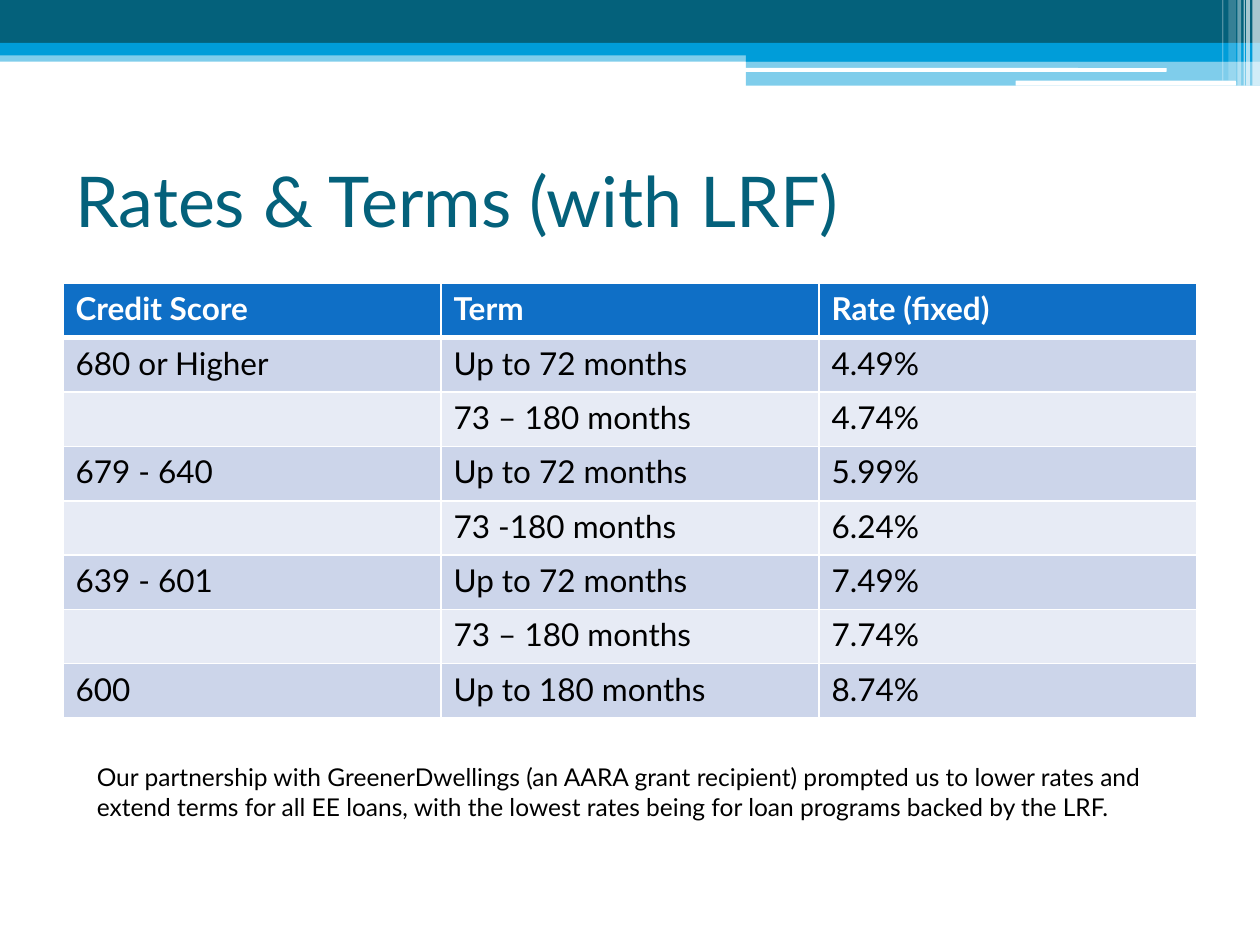
import lxml.etree
import pptx
import pptx.dml.color
import pptx.enum.shapes
import pptx.enum.text
import pptx.oxml
import pptx.oxml.ns
import pptx.util

Inches = pptx.util.Inches
Shape = pptx.enum.shapes.MSO_SHAPE
Anchor = pptx.enum.text.MSO_ANCHOR
qn = pptx.oxml.ns.qn

FONT = "Lato"
TEAL, CYAN, BLUE = "04617B", "009DD9", "0F6FC6"
WHITE, BLACK = "FFFFFF", "000000"
BANDS = ("CCD5EA", "E7EBF5")

BARS = [
    (0, 0.4, 10, 0.09, CYAN, 50),
    (0, 0, 10, 0.34, TEAL, 100),
    (0, 0.34, 10, 0.1, CYAN, 100),
    (5.92, 0.39, 4.08, 0.1, CYAN, 100),
    (5.92, 0.48, 4.08, 0.2, CYAN, 50),
]
GROOVES = [(5.91, 0.54, 3.35, 0.03), (8.06, 0.64, 1.75, 0.04)]
STRIPES = [
    (9.94, 0.06, 0.68, 65),
    (9.89, 0.03, 0.68, 65),
    (9.87, 0.01, 0.68, 60),
    (9.82, 0.03, 0.68, 40),
    (9.75, 0.06, 0.64, 20),
    (9.7, 0.01, 0.64, 30),
]
RATES = [
    ("Credit Score", "Term", "Rate (fixed)"),
    ("680 or Higher", "Up to 72 months", "4.49%"),
    ("", "73 – 180 months", "4.74%"),
    ("679 - 640", "Up to 72 months", "5.99%"),
    ("", "73 -180 months", "6.24%"),
    ("639 - 601", "Up to 72 months", "7.49%"),
    ("", "73 – 180 months", "7.74%"),
    ("600", "Up to 180 months", "8.74%"),
]
NOTE = (
    "Our partnership with GreenerDwellings (an AARA grant recipient) prompted us "
    "to lower rates and extend terms for all EE loans, with the lowest rates "
    "being for loan programs backed by the LRF."
)


def paint(fill, color, opacity=100):
    """Give a fill a solid colour and an opacity in percent."""
    fill.solid()
    fill.fore_color.rgb = pptx.dml.color.RGBColor.from_string(color)
    if opacity < 100:
        tint = fill._xPr.find(qn("a:solidFill"))[0]
        lxml.etree.SubElement(tint, qn("a:alpha")).set("val", str(opacity * 1000))


def style_text(para, size, color, bold=False):
    """Set the font of a paragraph."""
    para.font.name = FONT
    para.font.size = pptx.util.Pt(size)
    para.font.bold = bold
    paint(para.font.fill, color)


def add_block(page, kind, box, color, opacity=100):
    """Add a plain filled shape without line or shadow."""
    block = page.shapes.add_shape(kind, *box)
    block.shadow.inherit = False
    block.line.fill.background()
    paint(block.fill, color, opacity)


def add_banner(page, box):
    """Draw the layered bars, grooves and stripes at the top."""
    left, top, width, height = box

    def place(x, y, w, h):
        """Turn banner inches into a slide box."""
        return left + Inches(x), top + Inches(y), Inches(w), Inches(h)

    for *bar, color, opacity in BARS:
        add_block(page, Shape.RECTANGLE, place(*bar), color, opacity)
    for groove in GROOVES:
        add_block(page, Shape.ROUNDED_RECTANGLE, place(*groove), WHITE)
    for x, w, h, opacity in STRIPES:
        add_block(page, Shape.RECTANGLE, place(x, 0, w, h), WHITE, opacity)


def add_title(page, box):
    """Fill and place the title placeholder."""
    title = page.shapes.title
    title.left, title.top, title.width, title.height = box
    frame = title.text_frame
    frame.text = "Rates & Terms (with LRF)"
    frame.vertical_anchor = Anchor.MIDDLE
    frame.auto_size = pptx.enum.text.MSO_AUTO_SIZE.NONE
    frame.paragraphs[0].alignment = pptx.enum.text.PP_ALIGN.LEFT
    style_text(frame.paragraphs[0], 40, TEAL)


def add_borders(cell, row):
    """Rule a cell in white, heavier below the header row."""
    widths = {"L": 1, "R": 1, "T": 3 if row == 1 else 1, "B": 3 if row == 0 else 1}
    properties = cell._tc.get_or_add_tcPr()
    for side, width in widths.items():
        line = lxml.etree.SubElement(properties, qn(f"a:ln{side}"))
        line.set("w", str(pptx.util.Pt(width)))
        fill = lxml.etree.SubElement(line, qn("a:solidFill"))
        lxml.etree.SubElement(fill, qn("a:srgbClr")).set("val", WHITE)


def add_rates(page, box):
    """Add the banded table of rates in equal rows and columns."""
    left, top, width, height = box
    table = page.shapes.add_table(len(RATES), len(RATES[0]), *box).table
    for column in table.columns:
        column.width = width // len(RATES[0])
    for line in table.rows:
        line.height = height // len(RATES)
    for row, texts in enumerate(RATES):
        header = row == 0
        for column, text in enumerate(texts):
            cell = table.cell(row, column)
            cell.text = text
            style_text(cell.text_frame.paragraphs[0], 18,
                       WHITE if header else BLACK, header)
            add_borders(cell, row)
            paint(cell.fill, BLUE if header else BANDS[(row - 1) % 2])


def add_note(page, box):
    """Add the remark below the table."""
    frame = page.shapes.add_textbox(*box).text_frame
    frame.word_wrap = True
    frame.auto_size = pptx.enum.text.MSO_AUTO_SIZE.SHAPE_TO_FIT_TEXT
    frame.text = NOTE
    style_text(frame.paragraphs[0], 14, BLACK)


def main():
    """Build and save the deck."""
    deck = pptx.Presentation()
    deck.slide_width, deck.slide_height = Inches(10), Inches(7.5)
    page = deck.slides.add_slide(deck.slide_layouts.get_by_name("Title Only"))
    add_banner(page, (0, 0, Inches(10), Inches(0.68)))
    add_title(page, (Inches(0.5), Inches(1), Inches(9), Inches(1.17)))
    add_rates(page, (Inches(0.5), Inches(2.25), Inches(9), Inches(3.45)))
    add_note(page, (Inches(0.67), Inches(6), Inches(8.67), Inches(0.57)))
    deck.save("out.pptx")


if __name__ == "__main__":
    main()
